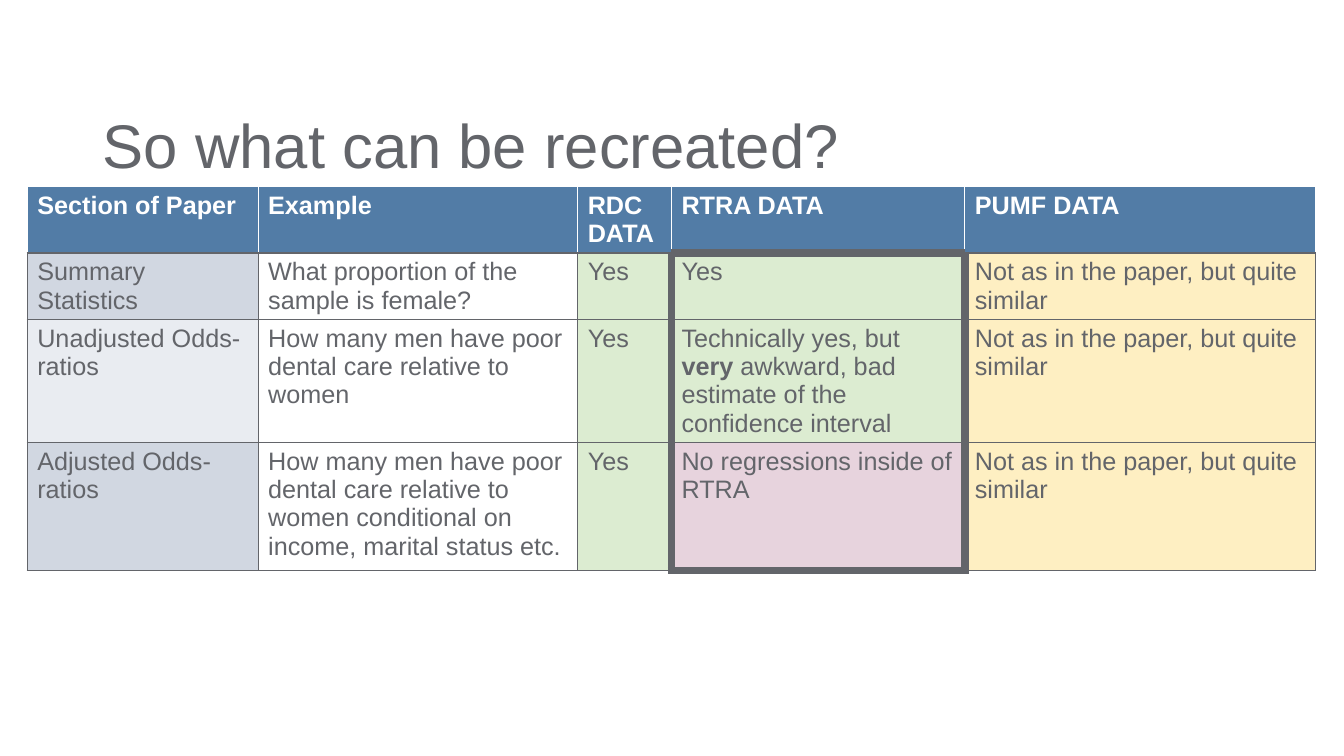
from dataclasses import dataclass

from lxml import etree
from pptx import Presentation
from pptx.dml.color import RGBColor
from pptx.enum.text import MSO_ANCHOR, MSO_AUTO_SIZE, PP_ALIGN
from pptx.oxml.ns import qn
from pptx.util import Inches, Pt

LEFT = PP_ALIGN.LEFT
MIDDLE = MSO_ANCHOR.MIDDLE
NO_AUTOFIT = MSO_AUTO_SIZE.NONE


@dataclass(frozen=True)
class Theme:
    font: str = "Arial"
    title_size: int = 44
    table_size: int = 18
    ink: str = "63656A"
    white: str = "FFFFFF"
    header: str = "527CA6"
    band_dark: str = "D1D7E1"
    band_light: str = "E9ECF1"
    possible: str = "DCECD1"
    impossible: str = "E7D3DD"
    approximate: str = "FEEFC2"
    thin: int = 1
    thick: int = 6


THEME = Theme()


@dataclass(frozen=True)
class Span:
    text: str
    bold: bool = False


@dataclass(frozen=True)
class Entry:
    spans: tuple[Span, ...]
    fill: str
    color: str = THEME.ink


@dataclass(frozen=True)
class Border:
    tag: str
    color: str
    width: int


HEADINGS = ("Section of Paper", "Example", "RDC DATA", "RTRA DATA", "PUMF DATA")
COLUMN_WIDTHS = (2.29, 3.17, 0.93, 2.91, 3.48)
ROW_HEIGHTS = (0.66, 0.66, 1.11, 1.27)
FRAMED_COLUMN = HEADINGS.index("RTRA DATA")
LAST_ROW = len(ROW_HEIGHTS) - 1


def section_row(section: str, band: str, example: str, rtra: tuple[Span, ...],
                rtra_fill: str) -> tuple[Entry, ...]:
    return (
        Entry((Span(section),), band),
        Entry((Span(example),), THEME.white),
        Entry((Span("Yes"),), THEME.possible),
        Entry(rtra, rtra_fill),
        Entry((Span("Not as in the paper, but quite similar"),), THEME.approximate),
    )


ROWS = (
    tuple(Entry((Span(heading, True),), THEME.header, THEME.white) for heading in HEADINGS),
    section_row("Summary Statistics", THEME.band_dark,
                "What proportion of the sample is female?",
                (Span("Yes"),), THEME.possible),
    section_row("Unadjusted Odds-ratios", THEME.band_light,
                "How many men have poor dental care relative to women",
                (Span("Technically yes, but "), Span("very", True),
                 Span(" awkward, bad estimate of the confidence interval")),
                THEME.possible),
    section_row("Adjusted Odds-ratios", THEME.band_dark,
                "How many men have poor dental care relative to women "
                "conditional on income, marital status etc.",
                (Span("No regressions inside of RTRA"),), THEME.impossible),
)


def format_font(font, size: int, color: str, bold: bool = False) -> None:
    values = {"name": THEME.font, "size": Pt(size), "bold": bold}
    for name, value in values.items():
        setattr(font, name, value)
    font.color.rgb = RGBColor.from_string(color)


def cell_borders(row: int, column: int) -> list[Border]:
    """Thin lines everywhere, with a thick frame round the body of the RTRA column."""
    body = row > 0
    framed = column == FRAMED_COLUMN
    thick_edges = {
        "a:lnL": body and column in (FRAMED_COLUMN, FRAMED_COLUMN + 1),
        "a:lnR": body and column in (FRAMED_COLUMN - 1, FRAMED_COLUMN),
        "a:lnT": framed and row == 1,
        "a:lnB": framed and row in (0, LAST_ROW),
    }
    return [
        Border(tag, THEME.ink if body or tag == "a:lnB" else THEME.white,
               THEME.thick if thick else THEME.thin)
        for tag, thick in thick_edges.items()
    ]


def draw_border(cell, border: Border) -> None:
    properties = cell._tc.get_or_add_tcPr()
    line = etree.SubElement(properties, qn(border.tag), w=str(Pt(border.width)))
    fill = etree.SubElement(line, qn("a:solidFill"))
    etree.SubElement(fill, qn("a:srgbClr"), val=border.color)


def fill_cell(cell, entry: Entry, borders: list[Border]) -> None:
    for border in borders:
        draw_border(cell, border)
    cell.fill.solid()
    cell.fill.fore_color.rgb = RGBColor.from_string(entry.fill)
    para = cell.text_frame.paragraphs[0]
    for span in entry.spans:
        run = para.add_run()
        run.text = span.text
        format_font(run.font, THEME.table_size, entry.color, span.bold)


def add_title(page, text: str) -> None:
    title = page.shapes.title
    place = {"left": 0.92, "top": 1.09, "width": 11.5, "height": 0.76}
    for name, value in place.items():
        setattr(title, name, Inches(value))
    frame = title.text_frame
    frame.text = text
    layout = {"vertical_anchor": MIDDLE, "auto_size": NO_AUTOFIT, "word_wrap": True}
    for name, value in layout.items():
        setattr(frame, name, value)
    para = frame.paragraphs[0]
    para.alignment = LEFT
    para.line_spacing = 0.9
    format_font(para.runs[0].font, THEME.title_size, THEME.ink)


def add_comparison_table(page) -> None:
    table = page.shapes.add_table(
        len(ROWS), len(HEADINGS), Inches(0.27), Inches(1.85),
        Inches(sum(COLUMN_WIDTHS)), Inches(sum(ROW_HEIGHTS))).table
    table.horz_banding = False
    for column, width in zip(table.columns, COLUMN_WIDTHS):
        column.width = Inches(width)
    for row, height in zip(table.rows, ROW_HEIGHTS):
        row.height = Inches(height)
    for row_index, entries in enumerate(ROWS):
        for column_index, entry in enumerate(entries):
            fill_cell(table.cell(row_index, column_index), entry,
                      cell_borders(row_index, column_index))


def main() -> None:
    deck = Presentation()
    deck.slide_width = Inches(13.33)
    deck.slide_height = Inches(7.5)
    title_only = deck.slide_layouts.get_by_name("Title Only")
    page = deck.slides.add_slide(title_only)
    add_title(page, "So what can be recreated?")
    add_comparison_table(page)
    deck.save("out.pptx")


if __name__ == "__main__":
    main()
